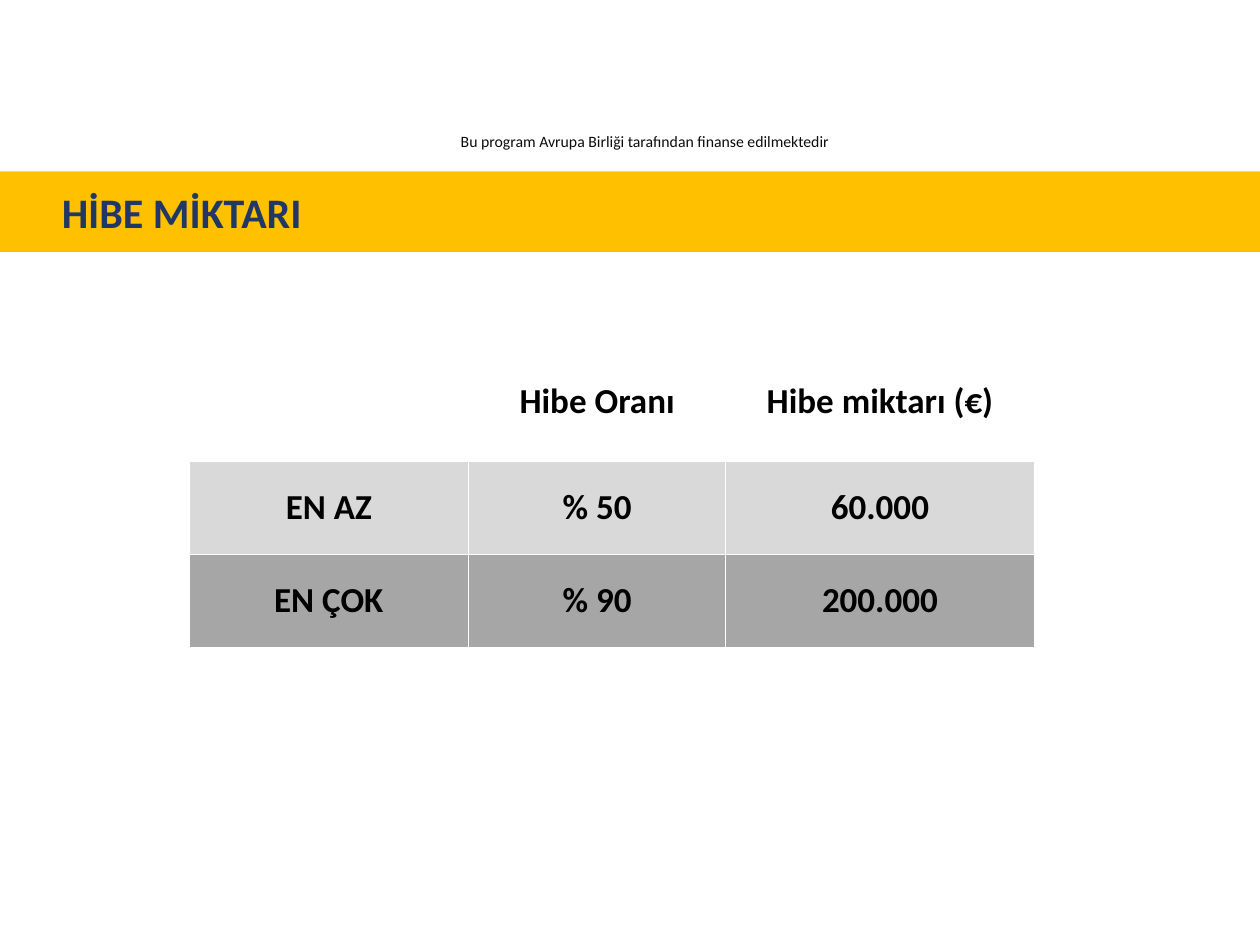
from typing import NamedTuple, Optional

from lxml.etree import SubElement
from pptx import Presentation
from pptx.dml.color import RGBColor
from pptx.enum.text import MSO_ANCHOR as Anchor, MSO_AUTO_SIZE as AutoSize, PP_ALIGN as Align
from pptx.oxml.ns import qn
from pptx.util import Inches, Pt

FONT = "Calibri"
AMBER = RGBColor(0xFF, 0xC0, 0x00)
NAVY = RGBColor(0x20, 0x38, 0x64)
NEAR_BLACK = RGBColor(0x0D, 0x0D, 0x0D)
BLACK = RGBColor(0x00, 0x00, 0x00)
WHITE = RGBColor(0xFF, 0xFF, 0xFF)
LIGHT_GRAY = RGBColor(0xD9, 0xD9, 0xD9)
MID_GRAY = RGBColor(0xA6, 0xA6, 0xA6)


class GrantRow(NamedTuple):
    texts: tuple[str, ...]
    height: float
    fill: Optional[RGBColor] = None


COLUMN_WIDTHS = (2.22, 2.04, 2.45)
GRANT_ROWS = (
    GrantRow(("", "Hibe Oranı", "Hibe miktarı (€)"), 0.95),
    GrantRow(("EN AZ", "% 50", "60.000"), 0.74, LIGHT_GRAY),
    GrantRow(("EN ÇOK", "% 90", "200.000"), 0.74, MID_GRAY),
)


def write(paragraph, text: str, size: float, color: RGBColor, align: Align,
          bold: bool = False) -> None:
    paragraph.alignment = align
    run = paragraph.add_run()
    run.text = text
    run.font.name = FONT
    run.font.size = Pt(size)
    run.font.bold = bold
    run.font.color.rgb = color


def add_borders(cell, color: RGBColor, width: float) -> None:
    properties = cell._tc.get_or_add_tcPr()
    for side in ("a:lnL", "a:lnR", "a:lnT", "a:lnB"):
        line = SubElement(properties, qn(side), w=str(Pt(width)))
        fill = SubElement(line, qn("a:solidFill"))
        SubElement(fill, qn("a:srgbClr"), val=str(color))


def add_funding_note(slide) -> None:
    box = slide.shapes.add_textbox(Inches(2.79), Inches(1), Inches(4.68), Inches(0.25))
    frame = box.text_frame
    frame.word_wrap = True
    frame.auto_size = AutoSize.SHAPE_TO_FIT_TEXT
    write(frame.paragraphs[0], "Bu program Avrupa Birliği tarafından finanse edilmektedir ",
          9, NEAR_BLACK, Align.CENTER)


def add_title_band(slide) -> None:
    title = slide.shapes.title
    title.left, title.top = Inches(0), Inches(1.36)
    title.width, title.height = Inches(10), Inches(0.64)
    title.fill.solid()
    title.fill.fore_color.rgb = AMBER
    frame = title.text_frame
    frame.auto_size = AutoSize.NONE
    frame.vertical_anchor = Anchor.MIDDLE
    frame.margin_left = frame.margin_right = Inches(0.1)
    frame.margin_top = frame.margin_bottom = Inches(0.12)
    paragraph = frame.paragraphs[0]
    paragraph._p.get_or_add_pPr().set("indent", str(Inches(0.39)))
    write(paragraph, "HİBE MİKTARI", 24, NAVY, Align.LEFT, bold=True)


def add_grant_table(slide) -> None:
    height = sum(row.height for row in GRANT_ROWS)
    frame = slide.shapes.add_table(len(GRANT_ROWS), len(COLUMN_WIDTHS), Inches(1.5),
                                   Inches(2.71), Inches(sum(COLUMN_WIDTHS)), Inches(height))
    table = frame.table
    table.horz_banding = False
    for column, width in zip(table.columns, COLUMN_WIDTHS):
        column.width = Inches(width)
    for table_row, row in zip(table.rows, GRANT_ROWS):
        table_row.height = Inches(row.height)
        for cell, text in zip(table_row.cells, row.texts):
            cell.vertical_anchor = Anchor.MIDDLE
            cell.margin_left = cell.margin_right = Inches(0.07)
            cell.margin_top = cell.margin_bottom = Inches(0.05)
            add_borders(cell, WHITE, 1)
            if row.fill is None:
                cell.fill.background()
            else:
                cell.fill.solid()
                cell.fill.fore_color.rgb = row.fill
            if text:
                write(cell.text_frame.paragraphs[0], text, 20, BLACK, Align.CENTER, bold=True)


def main() -> None:
    presentation = Presentation()
    presentation.slide_width, presentation.slide_height = Inches(10), Inches(7.5)
    title_only = presentation.slide_layouts[5]
    slide = presentation.slides.add_slide(title_only)
    add_funding_note(slide)
    add_grant_table(slide)
    add_title_band(slide)
    presentation.save("out.pptx")


if __name__ == "__main__":
    main()
